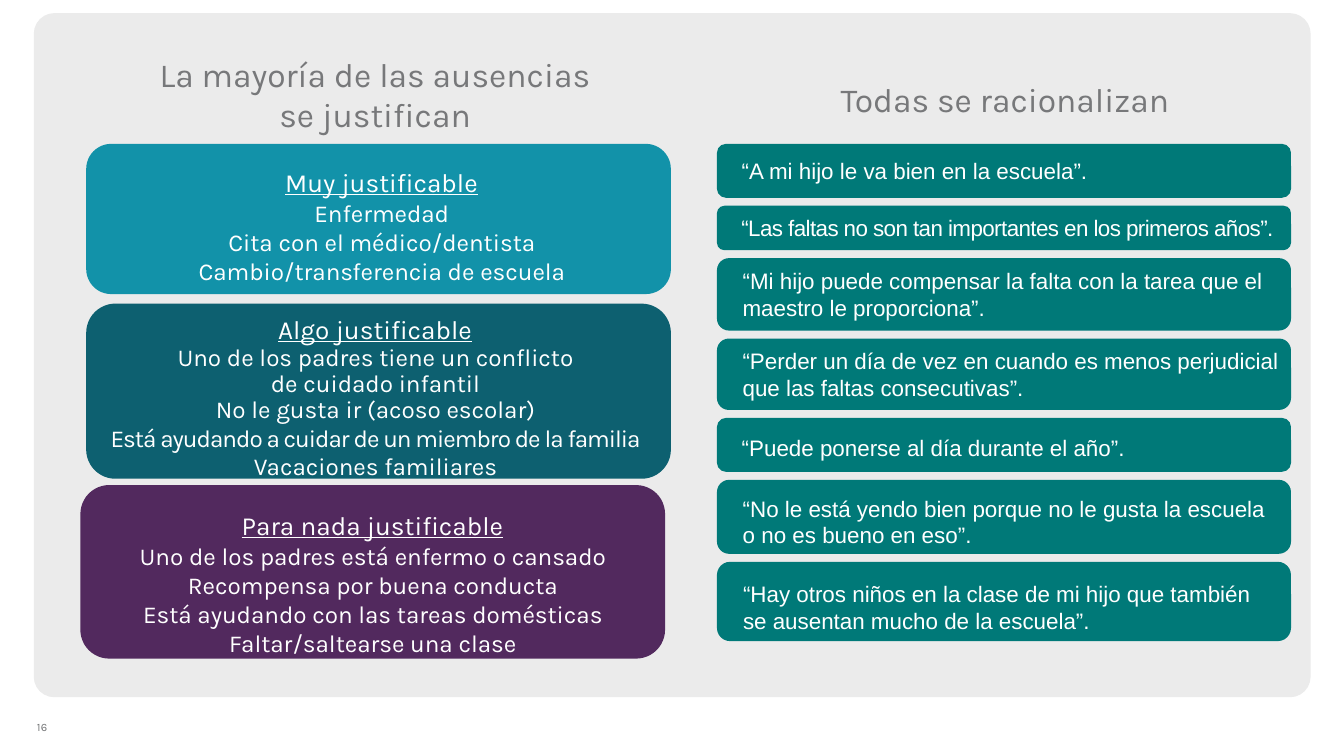
"""Build the slide on justified and rationalised school absences."""
import pptx
import pptx.dml.color
import pptx.enum.shapes
import pptx.enum.text
import pptx.util

Cm = pptx.util.Cm
Pt = pptx.util.Pt
RGB = pptx.dml.color.RGBColor
ALIGN = pptx.enum.text.PP_ALIGN
ANCHOR = pptx.enum.text.MSO_ANCHOR

WHITE = RGB(0xFF, 0xFF, 0xFF)
PANEL = RGB(0xEB, 0xEB, 0xEB)
GREY = RGB(0x77, 0x78, 0x7A)
TEAL = RGB(0x00, 0x79, 0x78)
BLUE = RGB(0x12, 0x92, 0xA9)
DARK_BLUE = RGB(0x0D, 0x60, 0x70)
PURPLE = RGB(0x52, 0x29, 0x5E)

CARD_WIDTH = 11.05
EXCUSE_LEFT, EXCUSE_TOP, EXCUSE_WIDTH, EXCUSE_GAP = 13.55, 2.72, 10.85, 0.15

REASONS = [
    dict(box=(1.63, 2.72, CARD_WIDTH, 2.84), color=BLUE, insets=(0.25, 0.28, 0.13),
         spacing=1.01, heading="Muy justificable",
         lines=[("Enfermedad", 0, 0), ("Cita con el médico/dentista", 0, 0),
                ("Cambio/transferencia de escuela", 0, 0)]),
    dict(box=(1.63, 5.74, CARD_WIDTH, 3.31), color=DARK_BLUE, insets=(0.13, 0.13, 0.25),
         spacing=Pt(14), heading="Algo justificable",
         lines=[("Uno de los padres tiene un conflicto\vde cuidado infantil", 0, 0),
                ("No le gusta ir (acoso escolar)", 0, 0),
                ("Está ayudando a cuidar de un miembro de la familia", 1.2, -50),
                ("Vacaciones familiares", 1.2, 0)]),
    dict(box=(1.52, 9.17, CARD_WIDTH, 3.28), color=PURPLE, insets=(0.2, 0.3, 0.2),
         spacing=1.0, heading="Para nada justificable",
         lines=[("Uno de los padres está enfermo o cansado", 0, 0),
                ("Recompensa por buena conducta", 0, 0),
                ("Está ayudando con las tareas domésticas", 0, 0),
                ("Faltar/saltearse una clase", 0, 0)]),
]

# Height, extra top inset, letter spacing, text
EXCUSES = [
    (1.02, 0, 0, "“A mi hijo le va bien en la escuela”."),
    (0.84, 0, -30, "“Las faltas no son tan importantes en los primeros años”."),
    (1.37, 0, 0, "“Mi hijo puede compensar la falta con la tarea que el "
                 "maestro le proporciona”."),
    (1.35, 0, 0, "“Perder un día de vez en cuando es menos perjudicial "
                 "que las faltas consecutivas”."),
    (1.02, 0.1, 0, "“Puede ponerse al día durante el año”."),
    (1.40, 0.18, 0, "“No le está yendo bien porque no le gusta la escuela\v"
                    "o no es bueno en eso”."),
    (1.50, 0.22, 0, "“Hay otros niños en la clase de mi hijo que también\v"
                    "se ausentan mucho de la escuela”."),
]


def set_frame(tf, insets=(0, 0, 0), anchor=ANCHOR.TOP):
    """Wrap a text frame and set its left, top and right insets."""
    tf.word_wrap = True
    tf.vertical_anchor = anchor
    tf.margin_left, tf.margin_top, tf.margin_right = map(Cm, insets)
    tf.margin_bottom = 0


def fill_paragraph(p, text, size, font="Karla", color=WHITE, align=ALIGN.CENTER,
                   spacing=1.0, before=0, tracking=0):
    """Write one formatted paragraph."""
    p.text = text
    p.alignment = align
    p.line_spacing = spacing
    if before:
        p.space_before = Pt(before)
    p.font.name, p.font.size, p.font.color.rgb = font, Pt(size), color
    if tracking:
        for r in p.runs:
            r.font._element.set("spc", str(tracking))


def add_rounded(s, box, color, radius=0.1667):
    """Add a borderless rounded rectangle."""
    sp = s.shapes.add_shape(pptx.enum.shapes.MSO_SHAPE.ROUNDED_RECTANGLE, *map(Cm, box))
    sp.adjustments[0] = radius
    sp.shadow.inherit = False
    sp.fill.solid()
    sp.fill.fore_color.rgb = color
    sp.line.fill.background()
    return sp


def add_label(s, box, text, size, **style):
    """Add a grey text box."""
    tf = s.shapes.add_textbox(*map(Cm, box)).text_frame
    set_frame(tf)
    fill_paragraph(tf.paragraphs[0], text, size, color=GREY, **style)


def add_reason(s, box, color, insets, spacing, heading, lines):
    """Add a card with an underlined heading and a list of reasons."""
    tf = add_rounded(s, box, color).text_frame
    set_frame(tf, insets)
    p = tf.paragraphs[0]
    fill_paragraph(p, heading, 14, spacing=spacing)
    p.font.underline = True
    for text, before, tracking in lines:
        fill_paragraph(tf.add_paragraph(), text, 13, spacing=spacing,
                       before=before, tracking=tracking)


def add_excuses(s):
    """Stack the quoted excuses with equal gaps."""
    top = EXCUSE_TOP
    for height, drop, tracking, text in EXCUSES:
        tf = add_rounded(s, (EXCUSE_LEFT, top, EXCUSE_WIDTH, height), TEAL).text_frame
        set_frame(tf, (0.42, drop, 0), ANCHOR.MIDDLE)
        fill_paragraph(tf.paragraphs[0], text, 12, font="Arial", align=ALIGN.LEFT,
                       spacing=Pt(14.2), tracking=tracking)
        top += height + EXCUSE_GAP


def main():
    """Build and save the slide."""
    prs = pptx.Presentation()
    prs.slide_width, prs.slide_height = Cm(25.4), Cm(14.29)
    s = prs.slides.add_slide(prs.slide_layouts[6])
    add_rounded(s, (0.64, 0.25, 24.13, 12.93), PANEL, radius=0.03)
    add_label(s, (1.63, 1.02, 10.92, 1.55),
              "La mayoría de las ausencias\vse justifican", 18)
    add_label(s, (15.44, 1.5, 7.11, 0.76), "Todas se racionalizan", 18)
    for reason in REASONS:
        add_reason(s, **reason)
    add_excuses(s)
    add_label(s, (0.7, 13.59, 0.4, 0.28), "16", 6, align=ALIGN.LEFT,
              spacing=Pt(7.8), tracking=10)
    prs.save("out.pptx")


if __name__ == "__main__":
    main()
